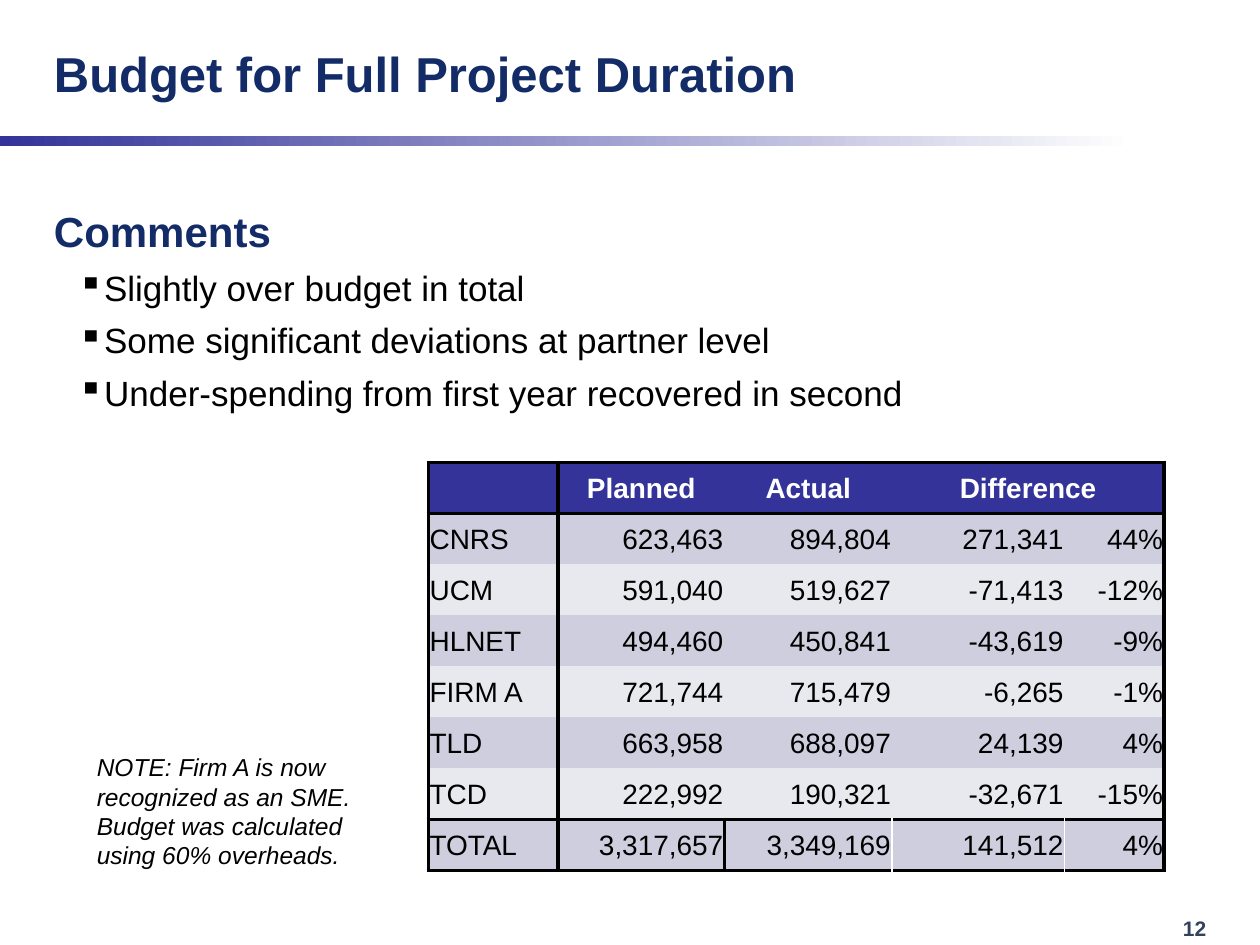
import pptx
import pptx.dml.color
import pptx.enum.shapes
import pptx.enum.text
import pptx.util
from lxml import etree
from pptx.oxml.ns import qn

Inches = pptx.util.Inches
Pt = pptx.util.Pt
RGBColor = pptx.dml.color.RGBColor
ALIGN = pptx.enum.text.PP_ALIGN
ANCHOR = pptx.enum.text.MSO_ANCHOR

NAVY = RGBColor(0x13, 0x2B, 0x66)
INDIGO = RGBColor(0x33, 0x33, 0x99)
SLATE = RGBColor(0x32, 0x42, 0x5D)
BAND_DARK = RGBColor(0xCE, 0xCE, 0xDE)
BAND_LIGHT = RGBColor(0xE8, 0xE8, 0xEF)
BLACK = RGBColor(0, 0, 0)
WHITE = RGBColor(0xFF, 0xFF, 0xFF)

HEAVY = (BLACK, 2.25)
THIN = (WHITE, 1)

BULLETS = [
    "Slightly over budget in total",
    "Some significant deviations at partner level",
    "Under-spending from first year recovered in second",
]
COLUMN_WIDTHS = [1.03, 1.32, 1.33, 1.37, 0.79]
BUDGET = [
    ["", "Planned", "Actual", "Difference", ""],
    ["CNRS", "623,463", "894,804", "271,341", "44%"],
    ["UCM", "591,040", "519,627", "-71,413", "-12%"],
    ["HLNET", "494,460", "450,841", "-43,619", "-9%"],
    ["FIRM A", "721,744", "715,479", "-6,265", "-1%"],
    ["TLD", "663,958", "688,097", "24,139", "4%"],
    ["TCD", "222,992", "190,321", "-32,671", "-15%"],
    ["TOTAL", "3,317,657", "3,349,169", "141,512", "4%"],
]


class Deck:
    font = "Arial"

    def __init__(self, width, height):
        self.prs = pptx.Presentation()
        self.prs.slide_width = Inches(width)
        self.prs.slide_height = Inches(height)
        self.s = self.prs.slides.add_slide(self.prs.slide_layouts[6])

    def run(self, p, text, size, color, bold=False, italic=False):
        r = p.add_run()
        r.text = text
        r.font.name = self.font
        r.font.size = Pt(size)
        r.font.bold = bold
        r.font.italic = italic
        r.font.color.rgb = color

    def text_box(self, x, y, w, h, anchor=ANCHOR.TOP):
        sp = self.s.shapes.add_textbox(Inches(x), Inches(y), Inches(w), Inches(h))
        tf = sp.text_frame
        tf.word_wrap = True
        tf.vertical_anchor = anchor
        return tf

    def bullet(self, tf, text, size, color):
        p = tf.add_paragraph()
        pPr = p._p.get_or_add_pPr()
        pPr.set("marL", str(Inches(0.39)))
        pPr.set("indent", str(Inches(-0.2)))
        p.level = 1
        p.space_before = Pt(6)
        etree.SubElement(pPr, qn("a:buChar")).set("char", "▪")
        self.run(p, text, size, color)

    def gradient_bar(self, x, y, w, h, start, end):
        sp = self.s.shapes.add_shape(
            pptx.enum.shapes.MSO_SHAPE.RECTANGLE,
            Inches(x), Inches(y), Inches(w), Inches(h))
        sp.shadow.inherit = False
        sp.line.fill.background()
        sp.fill.gradient()
        sp.fill.gradient_angle = 0
        for stop, color, position in zip(sp.fill.gradient_stops, (start, end), (0, 0.9)):
            stop.color.rgb = color
            stop.position = position

    def borders(self, cell, edges):
        tcPr = cell._tc.get_or_add_tcPr()
        for i, (side, edge) in enumerate(zip("LRTB", edges)):
            ln = etree.Element(qn("a:ln" + side))
            tcPr.insert(i, ln)
            if edge:
                color, width = edge
                ln.set("w", str(Pt(width)))
                fill = etree.SubElement(ln, qn("a:solidFill"))
                etree.SubElement(fill, qn("a:srgbClr")).set("val", str(color))
            else:
                etree.SubElement(ln, qn("a:noFill"))

    def table(self, x, y, widths, height, rows):
        last = len(rows) - 1
        table = self.s.shapes.add_table(
            len(rows), len(widths), Inches(x), Inches(y),
            Inches(sum(widths)), Inches(height)).table
        for column, width in zip(table.columns, widths):
            column.width = Inches(width)
        for row in table.rows:
            row.height = Inches(height / len(rows))
        table.cell(0, 3).merge(table.cell(0, 4))

        # Grid lines, numbered from the left and from the top
        def vertical(i, r):
            if i in (0, 1, len(widths)) or (r == last and i == 2):
                return HEAVY
            return THIN if r == last else None

        def horizontal(i):
            return HEAVY if i in (0, 1, last, last + 1) else None

        for r, values in enumerate(rows):
            for c, value in enumerate(values):
                cell = table.cell(r, c)
                cell.margin_left = cell.margin_right = cell.margin_top = Inches(0.01)
                cell.margin_bottom = 0
                cell.vertical_anchor = ANCHOR.MIDDLE
                cell.fill.solid()
                cell.fill.fore_color.rgb = (
                    INDIGO if r == 0 else BAND_DARK if r % 2 else BAND_LIGHT)
                span = cell.span_width if cell.is_merge_origin else 1
                self.borders(cell, (vertical(c, r), vertical(c + span, r),
                                    horizontal(r), horizontal(r + 1)))
                if value:
                    p = cell.text_frame.paragraphs[0]
                    p.alignment = (ALIGN.CENTER if r == 0
                                   else ALIGN.RIGHT if c else ALIGN.LEFT)
                    self.run(p, value, 16, BLACK if r else WHITE, bold=r == 0)


def main():
    deck = Deck(10, 7.5)

    # Page number and header bar
    tf = deck.text_box(9.29, 7.22, 0.64, 0.3)
    deck.run(tf.paragraphs[0], "12", 12, SLATE, bold=True)
    deck.gradient_bar(0, 1.08, 10, 0.08, INDIGO, WHITE)

    # Title
    tf = deck.text_box(0.33, 0.08, 7.08, 1, ANCHOR.MIDDLE)
    deck.run(tf.paragraphs[0], "Budget for Full Project Duration", 28, NAVY, bold=True)

    # Comments
    tf = deck.text_box(0.33, 1.58, 9.33, 5.58)
    deck.run(tf.paragraphs[0], "Comments", 24, NAVY, bold=True)
    for text in BULLETS:
        deck.bullet(tf, text, 20, BLACK)

    # Budget table
    deck.table(3.4, 3.67, COLUMN_WIDTHS, 3.24, BUDGET)

    # Note
    tf = deck.text_box(0.67, 5.92, 2.5, 1.04)
    deck.run(tf.paragraphs[0],
             "NOTE: Firm A is now recognized as an SME. "
             "Budget was calculated using 60% overheads.",
             14, BLACK, italic=True)

    deck.prs.save("out.pptx")


if __name__ == "__main__":
    main()
